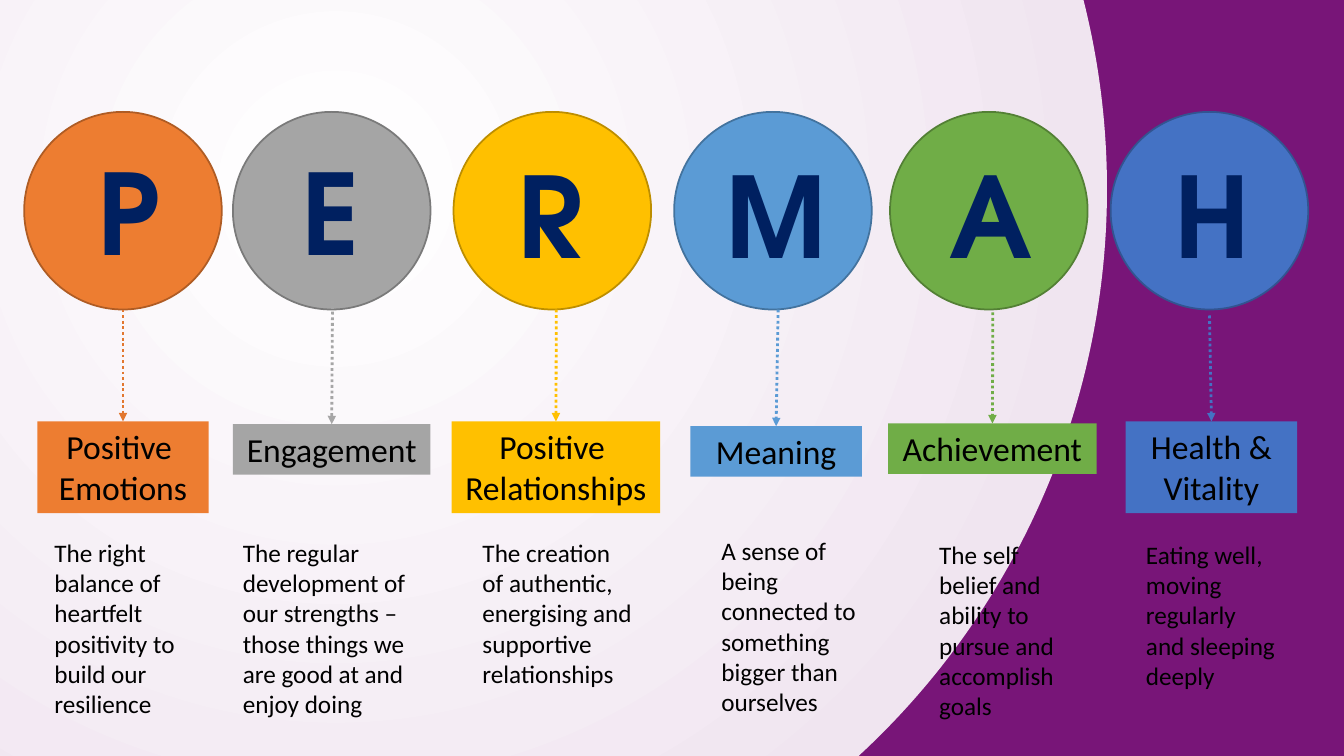
from collections import namedtuple

from pptx import Presentation
from pptx.dml.color import RGBColor
from pptx.enum.dml import MSO_LINE
from pptx.enum.shapes import MSO_CONNECTOR, MSO_SHAPE
from pptx.enum.text import MSO_ANCHOR, MSO_AUTO_SIZE, PP_ALIGN
from pptx.oxml import parse_xml
from pptx.oxml.ns import nsdecls, qn
from pptx.util import Cm, Pt

OVAL, RECT = MSO_SHAPE.OVAL, MSO_SHAPE.RECTANGLE
LINE, DOTS = MSO_CONNECTOR.STRAIGHT, MSO_LINE.ROUND_DOT
LEFT, MID = PP_ALIGN.LEFT, PP_ALIGN.CENTER
TOP, GROW = MSO_ANCHOR.TOP, MSO_AUTO_SIZE.SHAPE_TO_FIT_TEXT

COLORS = {
    "orange": "ED7D31", "gray": "A5A5A5", "gold": "FFC000",
    "blue": "5B9BD5", "green": "70AD47", "royal": "4472C4",
    "orange rim": "AF5C24", "gray rim": "7A7A7A", "gold rim": "BD8E00",
    "blue rim": "43739E", "green rim": "538035", "royal rim": "325491",
    "orange dots": "E2772F", "gray dots": "A6A6A6",
    "navy": "002060", "black": "000000",
    "white": "FFFFFF", "mist": "F0E5F0", "lilac": "D8BBD8", "plum": "781578",
}
STOPS = [(0, "white"), (100, "mist"), (100, "lilac"), (100, "plum")]
SIZE = 4.98

Pillar = namedtuple("Pillar", "hue disc letter glyph arrow title label note body")
PILLARS = [
    Pillar("orange", 0.61, "P", (2.21, 3.48, 1.6), (3.1, 7.8),
           ["Positive ", "Emotions"], (0.94, 10.62, 4.32, 2.31),
           "The right balance of heartfelt positivity to build our resilience",
           (1.12, 13.41, 3.81, 4.88)),
    Pillar("gray", 5.87, "E", (7.34, 3.48, 1.6), (8.38, 7.57),
           ["Engagement"], (5.87, 10.69, 4.98, 1.27),
           "The regular development of our strengths – those things we are good at and enjoy doing",
           (5.87, 13.41, 4.85, 4.88)),
    Pillar("gold", 11.43, "R", (12.8, 3.58, 1.6), (14.02, 7.8),
           ["Positive ", "Relationships"], (11.38, 10.62, 5.26, 2.31),
           "The creation of authentic, energising and supportive relationships",
           (11.91, 13.41, 4.29, 4.11)),
    Pillar("blue", 16.99, "M", (18.03, 3.58, 2.49), (19.61, 7.8),
           ["Meaning"], (17.4, 10.74, 4.32, 1.27),
           "A sense of being connected to something bigger than ourselves",
           (17.93, 13.36, 4.47, 4.88)),
    Pillar("green", 22.43, "A", (23.67, 3.58, 1.6), (25.02, 7.87),
           ["Achievement"], (22.38, 10.67, 5.26, 1.27),
           "The self belief and ability to pursue and accomplish goals",
           (23.42, 13.46, 3.81, 4.88)),
    Pillar("royal", 27.99, "H", (29.34, 3.56, 1.6), (30.48, 7.95),
           ["Health & Vitality"], (28.37, 10.62, 4.32, 2.31),
           "Eating well, moving regularly and sleeping deeply",
           (28.63, 13.46, 3.81, 4.11)),
]


class Deck:
    """Holds the style and the current slide."""

    def __init__(self, slide):
        self.slide = slide
        self.shapes = slide.shapes
        self.font = "Calibri"
        self.display = "TeX Gyre Adventor"

    def color(self, name):
        return RGBColor.from_string(COLORS[name])

    def backdrop(self):
        self.slide.background.fill.solid()
        old = self.slide.element.find(".//" + qn("a:solidFill"))
        stops = "".join(
            f'<a:gs pos="{pos * 1000}"><a:srgbClr val="{COLORS[name]}"/></a:gs>'
            for pos, name in STOPS)
        old.getparent().replace(old, parse_xml(
            f'<a:gradFill {nsdecls("a")} rotWithShape="1"><a:gsLst>{stops}</a:gsLst>'
            '<a:path path="circle"><a:fillToRect l="50000" t="50000" r="100000"'
            ' b="100000"/></a:path></a:gradFill>'))

    def form(self, kind, box, hue):
        shape = self.shapes.add_shape(kind, *map(Cm, box))
        shape.shadow.inherit = False
        shape.fill.solid()
        shape.fill.fore_color.rgb = self.color(hue)
        shape.line.fill.background()
        return shape

    def disc(self, left, hue):
        shape = self.form(OVAL, (left, 2.82, SIZE, SIZE), hue)
        shape.line.color.rgb = self.color(hue + " rim")
        shape.line.width = Pt(1.25)

    def text(self, shape, lines, size, align=LEFT, font=None, hue="black", bold=False):
        frame = shape.text_frame
        frame.word_wrap = True
        frame.auto_size = GROW
        frame.vertical_anchor = TOP
        for index, line in enumerate(lines):
            para = frame.add_paragraph() if index else frame.paragraphs[0]
            para.alignment = align
            run = para.add_run()
            run.text = line
            run.font.name = font or self.font
            run.font.size = Pt(size)
            run.font.bold = bold
            run.font.color.rgb = self.color(hue)

    def letter(self, char, spot):
        shape = self.shapes.add_textbox(*map(Cm, (*spot, 3.68)))
        self.text(shape, [char], 80, font=self.display, hue="navy", bold=True)

    def label(self, lines, box, hue):
        shape = self.form(RECT, box, hue)
        self.text(shape, lines, 24, align=MID)
        return shape

    def note(self, words, box):
        self.text(self.shapes.add_textbox(*map(Cm, box)), [words], 18)

    def arrow(self, start, label, hue):
        x, y = map(Cm, start)
        link = self.shapes.add_connector(LINE, x, y, x, label.top)
        link.end_connect(label, 0)
        dots = hue + " dots"
        link.line.color.rgb = self.color(dots if dots in COLORS else hue)
        link.line.width = Pt(2)
        link.line.dash_style = DOTS
        props = link.element.spPr
        props.find(qn("a:ln")).append(
            parse_xml(f'<a:tailEnd {nsdecls("a")} type="triangle"/>'))
        props.append(parse_xml(f'<a:effectLst {nsdecls("a")}/>'))


def main():
    show = Presentation()
    show.slide_width, show.slide_height = Cm(33.87), Cm(19.05)
    deck = Deck(show.slides.add_slide(show.slide_layouts[6]))
    deck.backdrop()
    for item in PILLARS:
        deck.disc(item.disc, item.hue)
        deck.letter(item.letter, item.glyph)
        label = deck.label(item.title, item.label, item.hue)
        deck.arrow(item.arrow, label, item.hue)
        deck.note(item.note, item.body)
    show.save("out.pptx")


if __name__ == "__main__":
    main()
